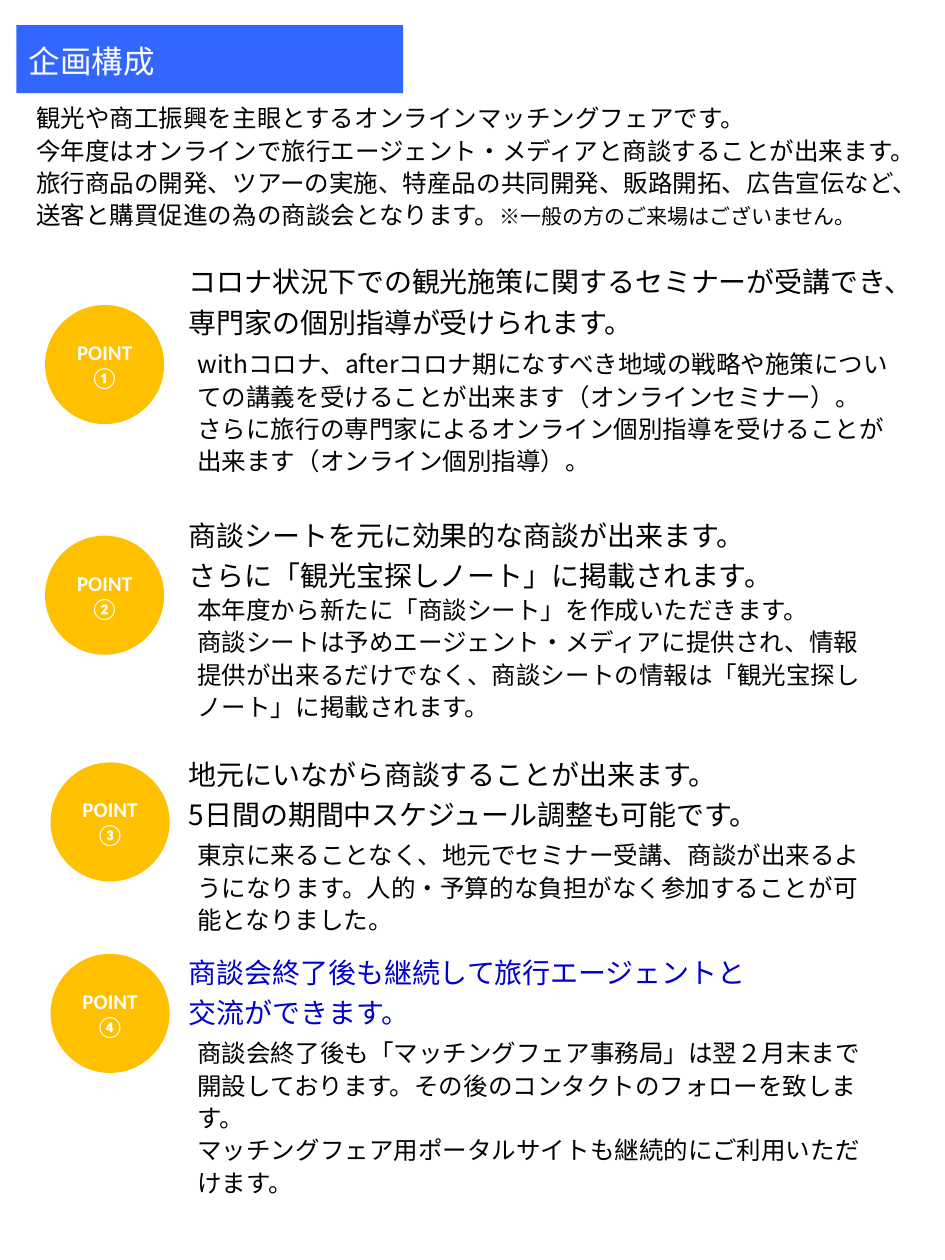
import pptx
import pptx.dml.color
import pptx.enum.shapes
import pptx.enum.text
import pptx.oxml
import pptx.oxml.ns
import pptx.util
from pptx.util import Cm

COLORS = {"banner": "3366FF", "point": "FFC000", "accent": "0000CC", "text": "000000", "white": "FFFFFF"}
JAPANESE = "Noto Sans CJK JP"
ALIGN = pptx.enum.text.PP_ALIGN


def write(shape, text, size=14, color="text", font=JAPANESE, bold=False,
          align=ALIGN.LEFT, spacing=1.1, wrap=True, append=False):
    frame = shape.text_frame
    frame.word_wrap = wrap
    for index, line in enumerate(text.split("\n")):
        paragraph = frame.paragraphs[-1] if append or index == 0 else frame.add_paragraph()
        paragraph.alignment = align
        paragraph.line_spacing = spacing
        run = paragraph.add_run()
        run.text = line
        run.font.size = pptx.util.Pt(size)
        run.font.bold = bold
        run.font.name = font
        run.font.color.rgb = pptx.dml.color.RGBColor.from_string(COLORS[color])
        east_asian = pptx.oxml.parse_xml(f'<a:ea {pptx.oxml.ns.nsdecls("a")} typeface="{font}"/>')
        run.font._element.find(pptx.oxml.ns.qn("a:latin")).addnext(east_asian)


def add_filled(slide, kind, left, top, width, height, color):
    shape = slide.shapes.add_shape(kind, Cm(left), Cm(top), Cm(width), Cm(height))
    shape.shadow.inherit = False
    shape.fill.solid()
    shape.fill.fore_color.rgb = pptx.dml.color.RGBColor.from_string(COLORS[color])
    shape.line.fill.background()
    shape.text_frame.vertical_anchor = pptx.enum.text.MSO_ANCHOR.MIDDLE
    return shape


presentation = pptx.Presentation()
presentation.slide_width = Cm(19.05)
presentation.slide_height = Cm(25.4)
slide = presentation.slides.add_slide(presentation.slide_layouts[6])
SHAPES = pptx.enum.shapes.MSO_SHAPE

banner = add_filled(slide, SHAPES.RECTANGLE, 0.33, 0.51, 7.8, 1.37, "banner")
write(banner, "企画構成", size=18, color="white", wrap=False)

introduction = slide.shapes.add_textbox(Cm(0.48), Cm(1.9), Cm(18.44), Cm(2.87))
write(introduction, "観光や商工振興を主眼とするオンラインマッチングフェアです。\n"
      "今年度はオンラインで旅行エージェント・メディアと商談することが出来ます。\n"
      "旅行商品の開発、ツアーの実施、特産品の共同開発、販路開拓、広告宣伝など、\n"
      "送客と購買促進の為の商談会となります。")
write(introduction, "※一般の方のご来場はございません。", size=12, append=True)

points = [
    ("①", 0.91, 6.15, "text",
     (5.08, 15.49, 1.9, "コロナ状況下での観光施策に関するセミナーが受講でき、専門家の個別指導が受けられます。"),
     (6.86, 14.6, 2.87, "withコロナ、afterコロナ期になすべき地域の戦略や施策についての講義を受けることが出来ます（オンラインセミナー）。\n"
      "さらに旅行の専門家によるオンライン個別指導を受けることが出来ます（オンライン個別指導）。")),
    ("②", 0.91, 10.8, "text",
     (10.19, 15.37, 1.9, "商談シートを元に効果的な商談が出来ます。\nさらに「観光宝探しノート」に掲載されます。"),
     (11.81, 14.2, 2.87, "本年度から新たに「商談シート」を作成いただきます。\n"
      "商談シートは予めエージェント・メディアに提供され、情報提供が出来るだけでなく、"
      "商談シートの情報は「観光宝探しノート」に掲載されます。")),
    ("③", 1.02, 15.37, "text",
     (15.01, 14.17, 1.9, "地元にいながら商談することが出来ます。\n5日間の期間中スケジュール調整も可能です。"),
     (16.76, 14.2, 2.24, "東京に来ることなく、地元でセミナー受講、商談が出来るようになります。"
      "人的・予算的な負担がなく参加することが可能となりました。")),
    ("④", 1.02, 19.23, "accent",
     (19, 14.17, 1.9, "商談会終了後も継続して旅行エージェントと\n交流ができます。"),
     (20.75, 14.2, 3.56, "商談会終了後も「マッチングフェア事務局」は翌２月末まで開設しております。"
      "その後のコンタクトのフォローを致します。\n"
      "マッチングフェア用ポータルサイトも継続的にご利用いただけます。")),
]
for number, circle_left, circle_top, color, heading, body in points:
    circle = add_filled(slide, SHAPES.OVAL, circle_left, circle_top, 2.4, 2.4, "point")
    write(circle, "POINT" + number, size=12, color="white", font="Calibri", bold=True,
          align=ALIGN.CENTER, spacing=1.0)
    for (top, width, height, text), left, style in (
        (heading, 3.56, {"size": 16, "color": color, "spacing": 1.2}),
        (body, 3.73, {}),
    ):
        box = slide.shapes.add_textbox(Cm(left), Cm(top), Cm(width), Cm(height))
        write(box, text, **style)

presentation.save("out.pptx")
